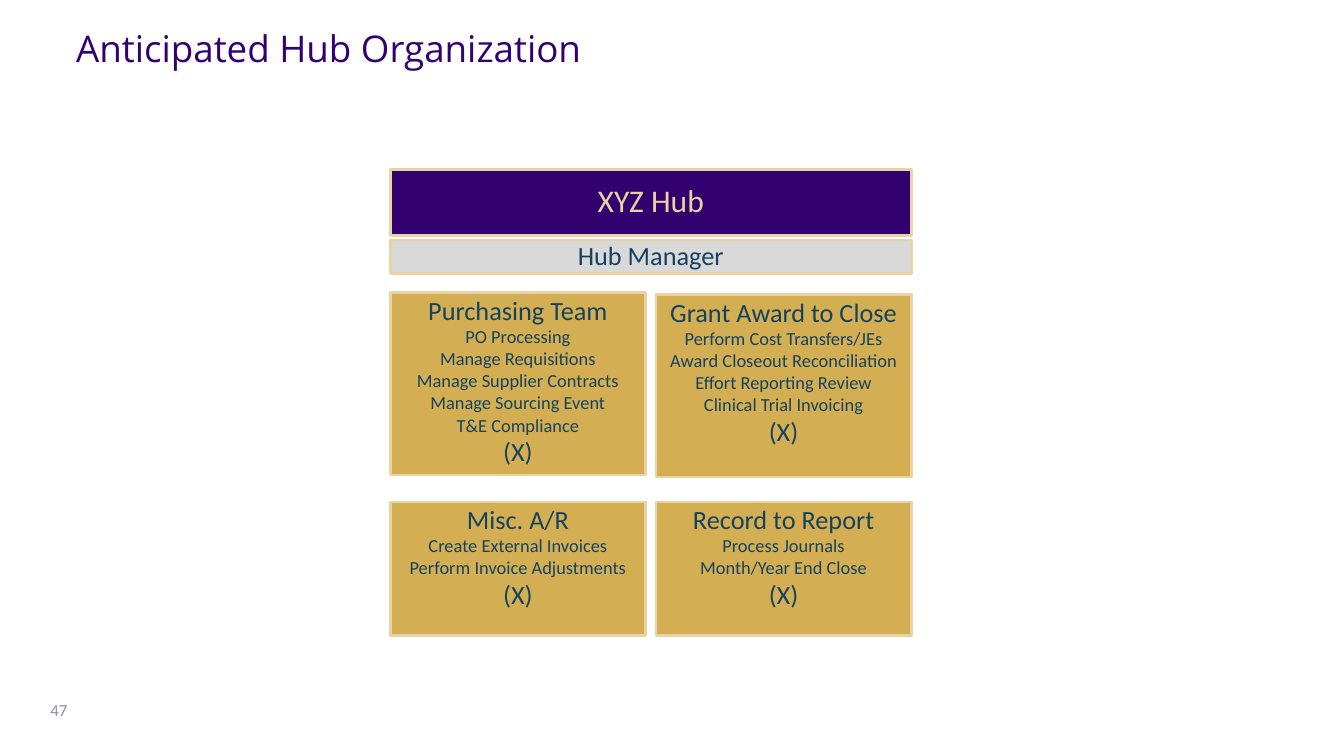
"""Build the slide showing the anticipated organization of a hub."""
from pptx import Presentation
from pptx.dml.color import RGBColor
from pptx.enum.shapes import MSO_SHAPE
from pptx.enum.text import MSO_ANCHOR, PP_ALIGN
from pptx.util import Cm, Pt

COLORS = {
    "purple": "33006F",
    "sand": "E8D3A2",
    "gold": "D4AE53",
    "silver": "D9D9D9",
    "navy": "15435F",
    "gray": "908CA4",
}

LEFT, WIDTH, GAP = 10.49, 14, 0.28
TEAM_WIDTH = (WIDTH - GAP) / 2
RIGHT = LEFT + TEAM_WIDTH + GAP


def write_lines(frame, lines, color, align, spacing=1.0, font="Calibri"):
    frame.word_wrap = True
    for index, (text, size) in enumerate(lines):
        para = frame.add_paragraph() if index else frame.paragraphs[0]
        para.alignment = align
        para.line_spacing = spacing
        span = para.add_run()
        span.text = text
        span.font.name = font
        span.font.size = Pt(size)
        span.font.color.rgb = RGBColor.from_string(COLORS[color])


def add_box(page, left, top, width, height, fill, anchor):
    box = page.shapes.add_shape(
        MSO_SHAPE.RECTANGLE, Cm(left), Cm(top), Cm(width), Cm(height)
    )
    box.shadow.inherit = False
    box.fill.solid()
    box.fill.fore_color.rgb = RGBColor.from_string(COLORS[fill])
    box.line.color.rgb = RGBColor.from_string(COLORS["sand"])
    box.line.width = Pt(2)
    frame = box.text_frame
    frame.vertical_anchor = anchor
    frame.margin_left = frame.margin_right = Cm(0.03)
    frame.margin_top = frame.margin_bottom = Cm(0.03)
    return frame


deck = Presentation()
deck.slide_width = Cm(36.12)
deck.slide_height = Cm(20.32)
page = deck.slides.add_slide(deck.slide_layouts[6])

title = page.shapes.add_textbox(Cm(1.8), Cm(0.71), Cm(29.06), Cm(2.64))
write_lines(
    title.text_frame, [("Anticipated Hub Organization", 28)],
    "purple", PP_ALIGN.LEFT, 0.9, "Open Sans",
)

number = page.shapes.add_textbox(Cm(0.79), Cm(18.52), Cm(1.27), Cm(1.09))
number.text_frame.vertical_anchor = MSO_ANCHOR.MIDDLE
write_lines(number.text_frame, [("47", 12.8)], "gray", PP_ALIGN.RIGHT)

headers = [
    ("XYZ Hub", 24, 4.55, 1.78, "purple", "sand"),
    ("Hub Manager", 20, 6.45, 0.91, "silver", "navy"),
]
for text, size, top, height, fill, color in headers:
    frame = add_box(page, LEFT, top, WIDTH, height, fill, MSO_ANCHOR.MIDDLE)
    write_lines(frame, [(text, size)], color, PP_ALIGN.CENTER, 0.9)

teams = [
    (LEFT, 7.87, 4.9, "Purchasing Team", [
        "PO Processing",
        "Manage Requisitions",
        "Manage Supplier Contracts",
        "Manage Sourcing Event",
        "T&E Compliance",
    ]),
    (RIGHT, 7.92, 4.9, "Grant Award to Close", [
        "Perform Cost Transfers/JEs",
        "Award Closeout Reconciliation",
        "Effort Reporting Review",
        "Clinical Trial Invoicing",
    ]),
    (LEFT, 13.49, 3.6, "Misc. A/R", [
        "Create External Invoices",
        "Perform Invoice Adjustments",
    ]),
    (RIGHT, 13.49, 3.6, "Record to Report", [
        "Process Journals",
        "Month/Year End Close",
    ]),
]
for left, top, height, name, tasks in teams:
    frame = add_box(page, left, top, TEAM_WIDTH, height, "gold", MSO_ANCHOR.TOP)
    lines = [(name, 20), *((task, 14) for task in tasks), ("(X)", 20)]
    write_lines(frame, lines, "navy", PP_ALIGN.CENTER)

deck.save("out.pptx")
